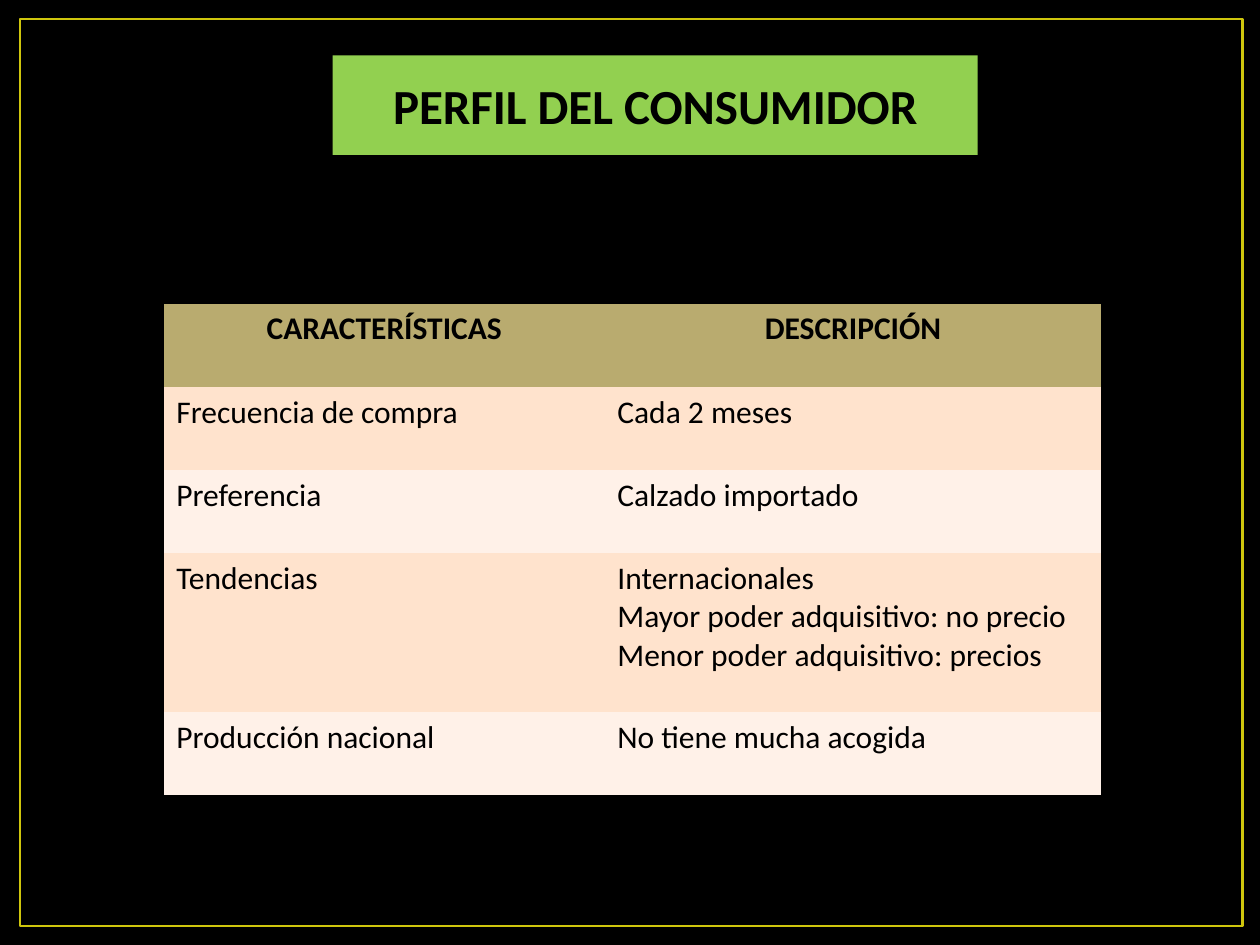
from pptx import Presentation
from pptx.dml.color import RGBColor
from pptx.enum.shapes import MSO_SHAPE
from pptx.enum.text import MSO_ANCHOR, MSO_AUTO_SIZE, PP_ALIGN
from pptx.util import Inches, Pt

RECT = MSO_SHAPE.RECTANGLE
MIDDLE = MSO_ANCHOR.MIDDLE
NO_FIT = MSO_AUTO_SIZE.NONE
LEFT, CENTER = PP_ALIGN.LEFT, PP_ALIGN.CENTER

BLACK = RGBColor(0x00, 0x00, 0x00)
YELLOW = RGBColor(0xCF, 0xC6, 0x0D)
GREEN = RGBColor(0x92, 0xD0, 0x50)
KHAKI = RGBColor(0xB9, 0xAB, 0x6F)
PEACH = RGBColor(0xFF, 0xE3, 0xCD)
CREAM = RGBColor(0xFF, 0xF1, 0xE8)

FONT = "Calibri"
PLAIN_TABLE_STYLE = "{2D5ABB26-0587-4C30-8999-92F81FD0307C}"

TITLE = "PERFIL DEL CONSUMIDOR"
ROWS = [
    ("CARACTERÍSTICAS", "DESCRIPCIÓN"),
    ("Frecuencia de compra", "Cada 2 meses"),
    ("Preferencia", "Calzado importado"),
    ("Tendencias", "Internacionales\nMayor poder adquisitivo: no precio\n"
                   "Menor poder adquisitivo: precios"),
    ("Producción nacional", "No tiene mucha acogida"),
]
COL_WIDTHS = [3.5, 3.94]
ROW_HEIGHTS = [0.66, 0.66, 0.66, 1.26, 0.66]


def box(left, top, width, height):
    return [Inches(v) for v in (left, top, width, height)]


def fill(target, color):
    target.fill.solid()
    target.fill.fore_color.rgb = color


def write(tf, text, size=18, bold=False, align=LEFT, color=BLACK):
    for i, line in enumerate(text.split("\n")):
        p = tf.add_paragraph() if i else tf.paragraphs[0]
        p.alignment = align
        r = p.add_run()
        r.text = line
        r.font.name = FONT
        r.font.size = Pt(size)
        r.font.bold = bold
        r.font.color.rgb = color


def add_frame(s):
    frame = s.shapes.add_shape(RECT, *box(0.16, 0.15, 9.7, 7.2))
    frame.shadow.inherit = False
    frame.fill.background()
    frame.line.color.rgb = YELLOW
    frame.line.width = Pt(1.5)


def add_title(s):
    title = s.shapes.title
    title.left, title.top, title.width, title.height = box(2.64, 0.44, 5.12, 0.79)
    fill(title, GREEN)
    tf = title.text_frame
    tf.auto_size = NO_FIT
    tf.vertical_anchor = MIDDLE
    write(tf, TITLE, size=28, bold=True, align=CENTER)


def add_profile_table(s):
    area = box(1.3, 2.41, sum(COL_WIDTHS), sum(ROW_HEIGHTS))
    table = s.shapes.add_table(len(ROWS), len(COL_WIDTHS), *area).table
    table._tbl.tblPr[0].text = PLAIN_TABLE_STYLE
    for col, width in zip(table.columns, COL_WIDTHS):
        col.width = Inches(width)
    for i, (row, height) in enumerate(zip(table.rows, ROW_HEIGHTS)):
        row.height = Inches(height)
        header = i == 0
        color = KHAKI if header else PEACH if i % 2 else CREAM
        for cell, text in zip(row.cells, ROWS[i]):
            fill(cell, color)
            write(cell.text_frame, text, bold=header,
                  align=CENTER if header else LEFT)


def main():
    prs = Presentation()
    prs.slide_width, prs.slide_height = Inches(10), Inches(7.5)
    s = prs.slides.add_slide(prs.slide_layouts[5])
    fill(s.background, BLACK)
    add_frame(s)
    add_title(s)
    add_profile_table(s)
    prs.save("out.pptx")


if __name__ == "__main__":
    main()
